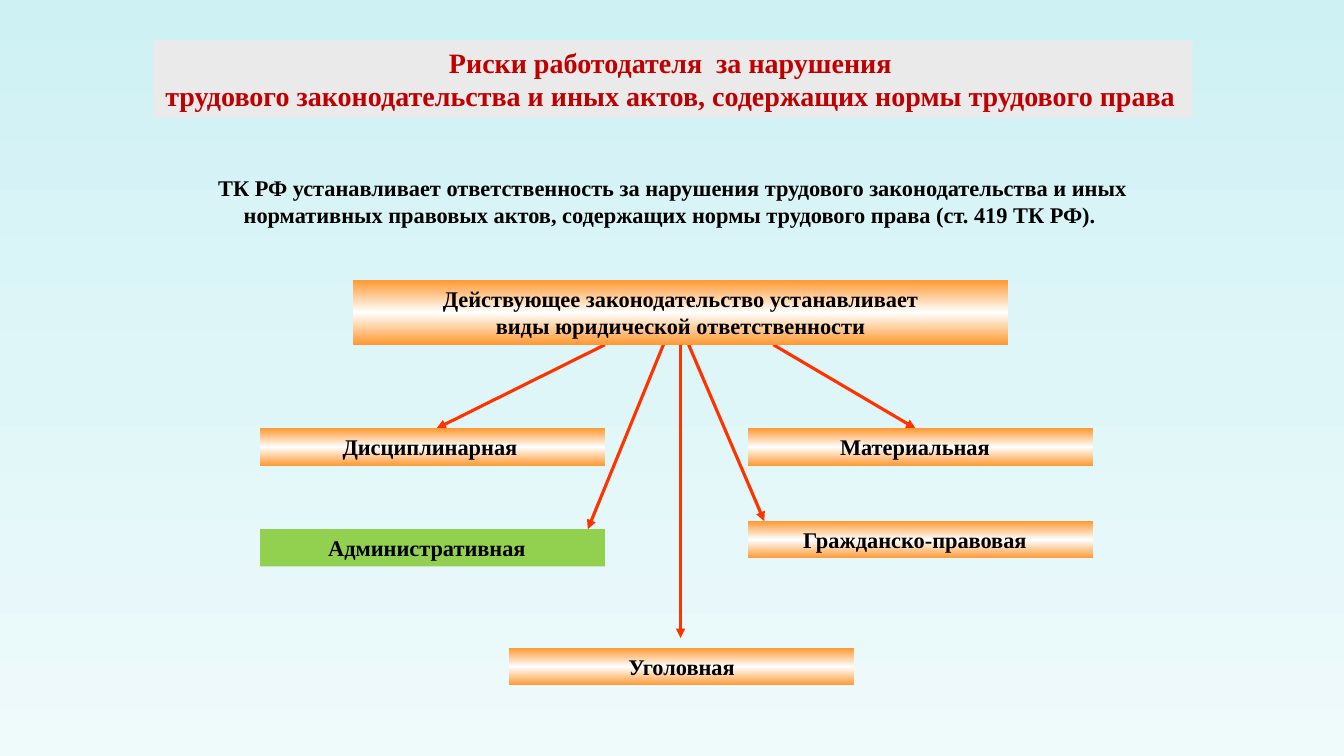
from copy import deepcopy

from pptx import Presentation
from pptx.dml.color import RGBColor
from pptx.enum.shapes import MSO_CONNECTOR, MSO_SHAPE
from pptx.enum.text import MSO_ANCHOR, PP_ALIGN
from pptx.oxml.ns import qn
from pptx.oxml.xmlchemy import OxmlElement
from pptx.util import Inches, Pt

RECT = MSO_SHAPE.RECTANGLE
LINE = MSO_CONNECTOR.STRAIGHT
CENTER = PP_ALIGN.CENTER
TOP = MSO_ANCHOR.TOP

BLACK = RGBColor(0, 0, 0)
RED = RGBColor(0xC0, 0, 0)
GRAY = RGBColor(0xEA, 0xEA, 0xEA)
GREEN = RGBColor(0x92, 0xD0, 0x50)
ARROW = RGBColor(0xFF, 0x33, 0)
ORANGE = RGBColor(0xFF, 0x99, 0x33)
WHITE = RGBColor(0xFF, 0xFF, 0xFF)
GLOW = [ORANGE, WHITE, ORANGE]
SKY = [RGBColor(0xCE, 0xF1, 0xF4), RGBColor(0xDF, 0xF6, 0xF8),
       RGBColor(0xEF, 0xFA, 0xFB)]


def blend(fill, root, colors):
    """Fill from top to bottom with three evenly spaced colors."""
    fill.gradient()
    fill.gradient_angle = 270
    stops = root.find(".//" + qn("a:gsLst"))
    stops.insert(1, deepcopy(stops[0]))
    for i, (stop, color) in enumerate(zip(fill.gradient_stops, colors)):
        stop.position = i / 2
        stop.color.rgb = color


def write(shape, lines, size=16, color=BLACK, pad=0):
    """Set centered bold lines; pad widens the right margin."""
    frame = shape.text_frame
    frame.word_wrap = True
    frame.vertical_anchor = TOP
    frame.margin_right = Inches(0.1 + pad)
    frame.text = "\n".join(lines)
    for para in frame.paragraphs:
        para.alignment = CENTER
        para.font.name = "Times New Roman"
        para.font.size = Pt(size)
        para.font.bold = True
        para.font.color.rgb = color


prs = Presentation()
prs.slide_width = Inches(13.33)
prs.slide_height = Inches(7.5)
slide = prs.slides.add_slide(prs.slide_layouts[6])
shapes = slide.shapes
blend(slide.background.fill, slide.element, SKY)

# Introduction
intro = shapes.add_textbox(Inches(1.92), Inches(1.68), Inches(9.5), Inches(0.64))
write(intro, ["ТК РФ устанавливает ответственность за нарушения трудового "
              "законодательства и иных нормативных правовых актов, "
              "содержащих нормы трудового права (ст. 419 ТК РФ). "])

# Arrows from the main box to each kind of liability
for x1, x2, y2 in [(6, 4.33, 4.25), (6.58, 5.83, 5.25), (6.83, 7.58, 5.17),
                   (7.67, 9.08, 4.25), (6.75, 6.75, 6.33)]:
    arrow = shapes.add_connector(LINE, Inches(x1), Inches(3.42),
                                 Inches(x2), Inches(y2))
    arrow.line.color.rgb = ARROW
    arrow.line.width = Pt(2.25)
    tip = OxmlElement("a:tailEnd")
    tip.set("type", "triangle")
    arrow.line._get_or_add_ln().append(tip)
    arrow.element.spPr.append(OxmlElement("a:effectLst"))

# Boxes: left, top, width, height, fill, lines, size, color, pad
WIDE, LOW = 3.42, 0.37
boxes = [
    (1.52, 0.4, 10.31, 0.77, GRAY,
     ["Риски работодателя  за нарушения",
      "трудового законодательства и иных актов, содержащих нормы трудового права"],
     20, RED, 0.05),
    (3.5, 2.78, 6.5, 0.64, GLOW,
     ["Действующее законодательство устанавливает",
      "виды юридической ответственности"], 16, BLACK, 0),
    (2.58, 4.25, WIDE, LOW, GLOW, ["Дисциплинарная"], 16, BLACK, 0.05),
    (7.42, 4.25, WIDE, LOW, GLOW, ["Материальная"], 16, BLACK, 0.11),
    (2.58, 5.25, WIDE, LOW, GREEN, ["Административная"], 16, BLACK, 0.11),
    (7.42, 5.17, WIDE, LOW, GLOW, ["Гражданско-правовая"], 16, BLACK, 0.11),
    (5.05, 6.43, WIDE, LOW, GLOW, ["Уголовная"], 16, BLACK, 0),
]
for left, top, width, height, fill, lines, size, color, pad in boxes:
    box = shapes.add_shape(RECT, Inches(left), Inches(top),
                           Inches(width), Inches(height))
    box.shadow.inherit = False
    box.line.fill.background()
    if fill is GLOW:
        blend(box.fill, box.element, GLOW)
    else:
        box.fill.solid()
        box.fill.fore_color.rgb = fill
    write(box, lines, size, color, pad)

prs.save("out.pptx")
